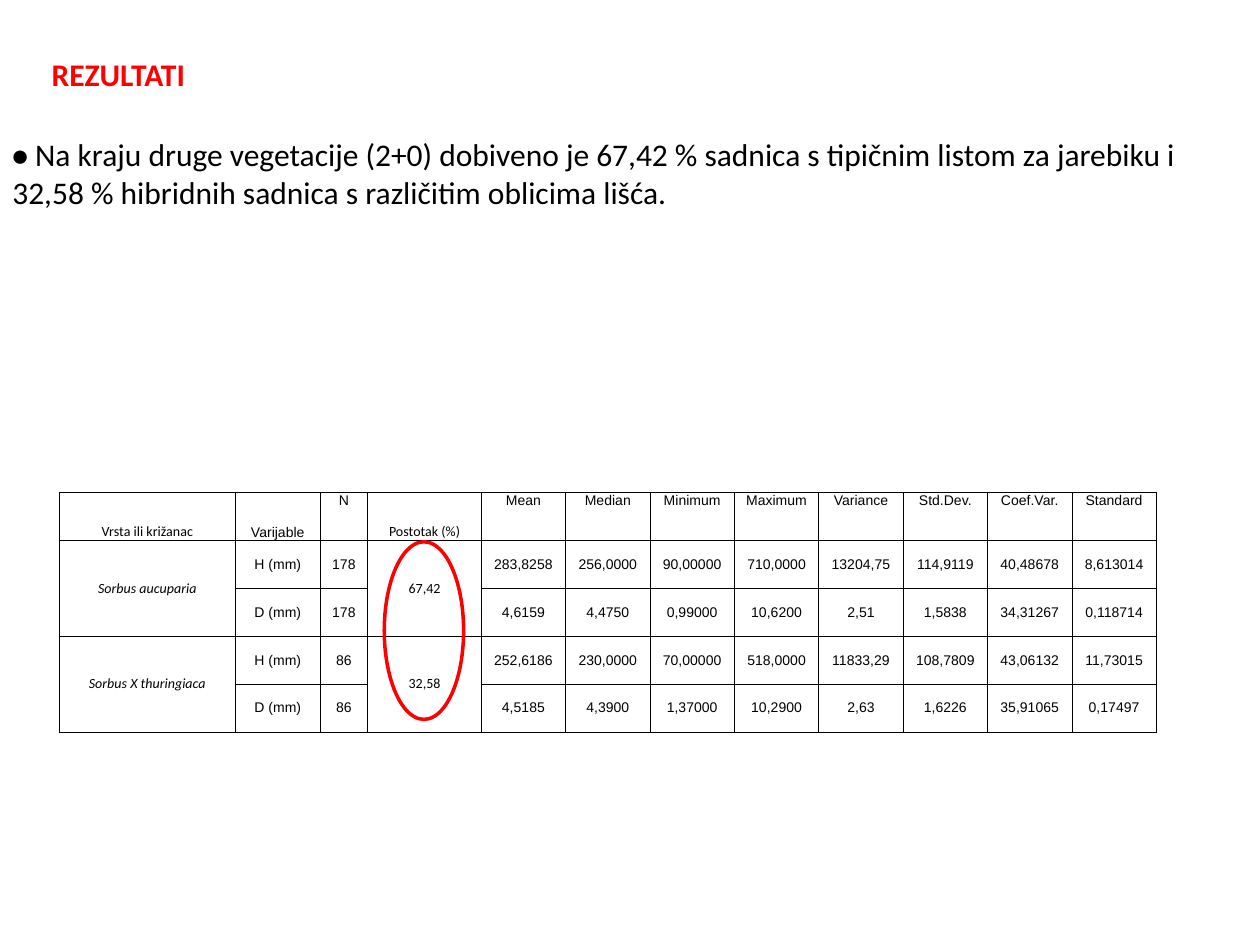
from lxml import etree
from pptx import Presentation
from pptx.dml.color import RGBColor
from pptx.enum.shapes import MSO_SHAPE
from pptx.enum.text import MSO_ANCHOR, MSO_AUTO_SIZE, PP_ALIGN
from pptx.oxml.ns import qn
from pptx.util import Inches, Pt

RED = RGBColor(0xFF, 0x00, 0x00)
BLACK = RGBColor(0x00, 0x00, 0x00)
LEFT, CENTER = PP_ALIGN.LEFT, PP_ALIGN.CENTER
TOP, MIDDLE, BOTTOM = MSO_ANCHOR.TOP, MSO_ANCHOR.MIDDLE, MSO_ANCHOR.BOTTOM
FIT_SHAPE = MSO_AUTO_SIZE.SHAPE_TO_FIT_TEXT
OVAL = MSO_SHAPE.OVAL

SPECIES, VARIABLE, PERCENT = 0, 1, 3
COLUMN_WIDTHS = [1.4, 0.67, 0.38, 0.9] + [0.67] * 8
ROW_HEIGHT = 0.38
ROWS = [
    ["Vrsta ili križanac", "Varijable", "N", "Postotak (%)", "Mean", "Median",
     "Minimum", "Maximum", "Variance", "Std.Dev.", "Coef.Var.", "Standard"],
    ["Sorbus aucuparia", "H (mm)", "178", "67,42", "283,8258", "256,0000",
     "90,00000", "710,0000", "13204,75", "114,9119", "40,48678", "8,613014"],
    ["", "D (mm)", "178", "", "4,6159", "4,4750",
     "0,99000", "10,6200", "2,51", "1,5838", "34,31267", "0,118714"],
    ["Sorbus X thuringiaca", "H (mm)", "86", "32,58", "252,6186", "230,0000",
     "70,00000", "518,0000", "11833,29", "108,7809", "43,06132", "11,73015"],
    ["", "D (mm)", "86", "", "4,5185", "4,3900",
     "1,37000", "10,2900", "2,63", "1,6226", "35,91065", "0,17497"],
]


def add_span(para, text, color=BLACK, **formats):
    span = para.add_run()
    span.text = text
    span.font.color.rgb = color
    for name, value in formats.items():
        setattr(span.font, name, value)


def add_borders(cell, color=BLACK, width=Pt(0.5)):
    properties = cell._tc.get_or_add_tcPr()
    for side in ("a:lnL", "a:lnR", "a:lnT", "a:lnB"):
        line = etree.SubElement(properties, qn(side), w=str(width))
        fill = etree.SubElement(line, qn("a:solidFill"))
        etree.SubElement(fill, qn("a:srgbClr"), val=str(color))


deck = Presentation()
deck.slide_width, deck.slide_height = Inches(10), Inches(7.5)
slide = deck.slides.add_slide(deck.slide_layouts[5])

# Title and finding
title = slide.shapes.title
title.left, title.top = Inches(0.31), Inches(0.39)
title.width, title.height = Inches(1.27), Inches(0.4)
finding = slide.shapes.add_textbox(Inches(0), Inches(1.02), Inches(10), Inches(0.71))
for box, wrap in ((title, False), (finding, True)):
    frame = box.text_frame
    frame.word_wrap = wrap
    frame.auto_size = FIT_SHAPE
    frame.vertical_anchor = TOP
    frame.paragraphs[0].alignment = LEFT

body_font = {"name": "Calibri", "size": Pt(18)}
add_span(title.text_frame.paragraphs[0], "REZULTATI", RED, bold=True, **body_font)
finding_para = finding.text_frame.paragraphs[0]
add_span(finding_para, "• ", bold=True, **body_font)
add_span(finding_para,
         "Na kraju druge vegetacije (2+0) dobiveno je 67,42 % sadnica s tipičnim "
         "listom za jarebiku i 32,58 % hibridnih sadnica s različitim oblicima lišća.",
         bold=False, **body_font)

# Table of seedling measurements
table = slide.shapes.add_table(
    len(ROWS), len(COLUMN_WIDTHS), Inches(0.47), Inches(3.91),
    Inches(sum(COLUMN_WIDTHS)), Inches(ROW_HEIGHT * len(ROWS))).table
table.first_row = table.horz_banding = False
for column, width in zip(table.columns, COLUMN_WIDTHS):
    column.width = Inches(width)

for row_index, values in enumerate(ROWS):
    table.rows[row_index].height = Inches(ROW_HEIGHT)
    for column_index, text in enumerate(values):
        cell = table.cell(row_index, column_index)
        add_borders(cell)
        cell.fill.background()
        for margin in ("margin_left", "margin_right", "margin_top", "margin_bottom"):
            setattr(cell, margin, 0)
        if row_index:
            cell.vertical_anchor = MIDDLE
        elif column_index in (SPECIES, VARIABLE, PERCENT):
            cell.vertical_anchor = BOTTOM
        else:
            cell.vertical_anchor = TOP
        para = cell.text_frame.paragraphs[0]
        para.alignment = CENTER
        if text:
            add_span(para, text, size=Pt(8), bold=False,
                     name="Calibri" if column_index in (SPECIES, PERCENT) else "Arial",
                     italic=row_index > 0 and column_index == SPECIES)

for first_row in (1, 3):
    for column_index in (SPECIES, PERCENT):
        table.cell(first_row, column_index).merge(table.cell(first_row + 1, column_index))

# Ring around the percentages
ring = slide.shapes.add_shape(OVAL, Inches(3.05), Inches(4.3), Inches(0.63), Inches(1.41))
ring.shadow.inherit = False
ring.fill.background()
ring.line.color.rgb = RED
ring.line.width = Pt(2)

deck.save("out.pptx")
